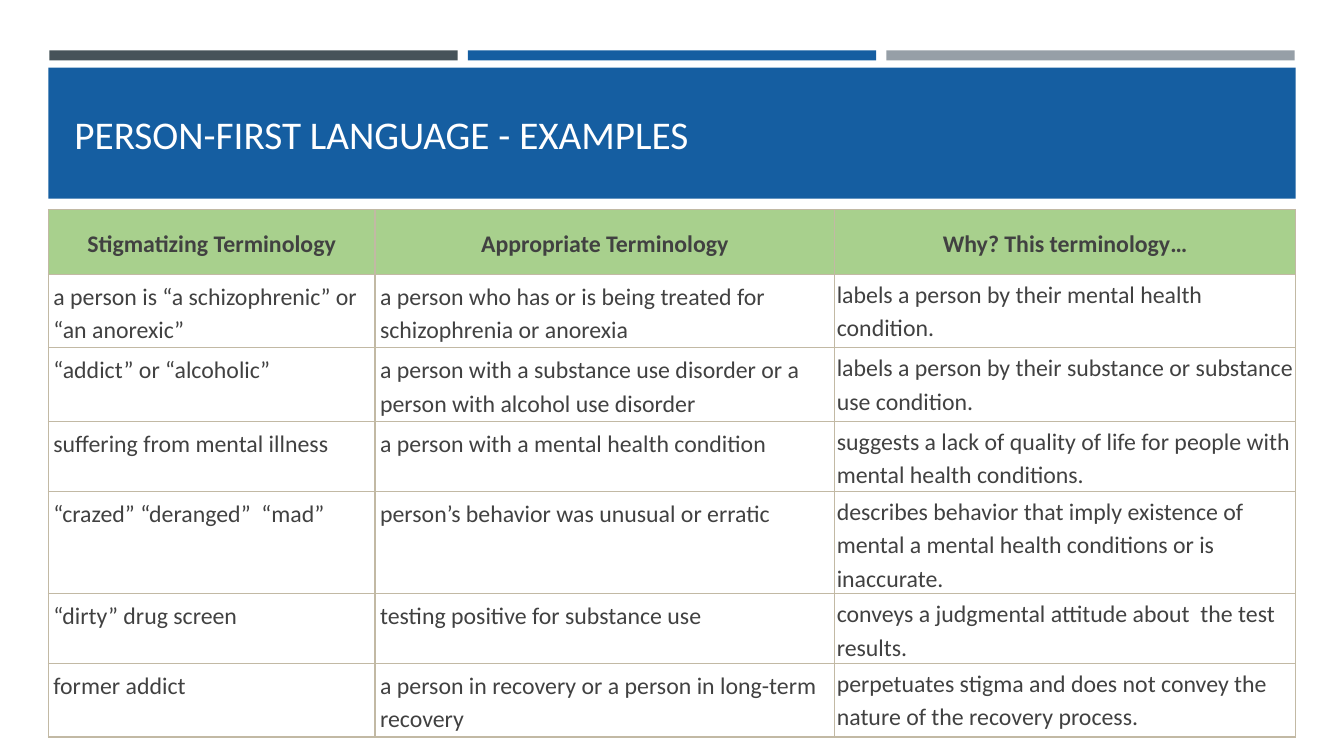
"""Build the slide of person-first language examples."""
from dataclasses import dataclass

from lxml.etree import SubElement
from pptx import Presentation
from pptx.dml.color import RGBColor
from pptx.enum.shapes import MSO_SHAPE as Shape
from pptx.enum.text import MSO_ANCHOR as Anchor, PP_ALIGN as Align
from pptx.oxml.ns import qn
from pptx.util import Inches, Pt

SLATE = RGBColor(0x46, 0x53, 0x59)
BLUE = RGBColor(0x15, 0x5E, 0xA1)
GRAY = RGBColor(0x96, 0x9F, 0xA7)
WHITE = RGBColor(0xFF, 0xFF, 0xFF)
GREEN = RGBColor(0xA8, 0xD0, 0x8D)
INK = RGBColor(0x41, 0x41, 0x41)
BORDER = RGBColor(0xC2, 0xB9, 0xA4)
FONT = "Calibri"


@dataclass(frozen=True)
class Band:
    left: float
    top: float
    width: float
    height: float
    color: RGBColor


@dataclass(frozen=True)
class Example:
    stigmatizing: str
    appropriate: str
    reason: str
    height: float

    def texts(self) -> tuple[str, str, str]:
        return self.stigmatizing, self.appropriate, self.reason


BANDS = [
    Band(0.49 + 4.15 * index, 0.5, 4.05, 0.1, color)
    for index, color in enumerate((SLATE, BLUE, GRAY))
] + [Band(0.48, 0.67, 12.37, 1.3, BLUE)]

COLUMN_WIDTHS = (3.24, 4.56, 4.57)
CELL_MARGINS = ((0.05, 0.04), (0.05, 0.04), (0.02, 0.02))
EXAMPLES = [
    Example("Stigmatizing Terminology", "Appropriate Terminology",
            "Why? This terminology…", 0.64),
    Example("a person is “a schizophrenic” or “an anorexic”",
            "a person who has or is being treated for schizophrenia or anorexia",
            "labels a person by their mental health condition.", 0.67),
    Example("“addict” or “alcoholic”",
            "a person with a substance use disorder or a person with alcohol use disorder",
            "labels a person by their substance or substance use condition.", 0.67),
    Example("suffering from mental illness",
            "a person with a mental health condition",
            "suggests a lack of quality of life for people with mental health conditions.",
            0.64),
    Example("“crazed” “deranged”  “mad”",
            "person’s behavior was unusual or erratic",
            "describes behavior that imply existence of mental a mental health "
            "conditions or is inaccurate.", 0.67),
    Example("“dirty” drug screen",
            "testing positive for substance use",
            "conveys a judgmental attitude about  the test results.", 0.64),
    Example("former addict",
            "a person in recovery or a person in long-term recovery",
            "perpetuates stigma and does not convey the nature of the recovery process.",
            0.67),
]


def style_font(font, size: float, color: RGBColor, bold: bool = False) -> None:
    font.name = FONT
    font.size = Pt(size)
    font.bold = bold
    font.color.rgb = color


def draw_band(page, band: Band) -> None:
    shape = page.shapes.add_shape(
        Shape.RECTANGLE, Inches(band.left), Inches(band.top),
        Inches(band.width), Inches(band.height))
    shape.shadow.inherit = False
    shape.fill.solid()
    shape.fill.fore_color.rgb = band.color
    shape.line.fill.background()


def draw_title(page, text: str) -> None:
    box = page.shapes.add_textbox(
        Inches(0.64), Inches(0.77), Inches(12.06), Inches(1.11))
    frame = box.text_frame
    frame.word_wrap = True
    frame.vertical_anchor = Anchor.MIDDLE
    frame.text = text
    style_font(frame.paragraphs[0].runs[0].font, 28, WHITE)


def set_borders(cell) -> None:
    properties = cell._tc.get_or_add_tcPr()
    for index, side in enumerate(("a:lnL", "a:lnR", "a:lnT", "a:lnB")):
        line = properties.makeelement(qn(side), {"w": str(Pt(1))})
        fill = SubElement(line, qn("a:solidFill"))
        SubElement(fill, qn("a:srgbClr"), val=str(BORDER))
        properties.insert(index, line)


def fill_cell(cell, text: str, margins: tuple[float, float], header: bool) -> None:
    side, edge = margins
    cell.margin_left = cell.margin_right = Inches(side)
    cell.margin_top = cell.margin_bottom = Inches(edge)
    cell.vertical_anchor = Anchor.MIDDLE if header else Anchor.TOP
    cell.fill.solid()
    cell.fill.fore_color.rgb = GREEN if header else WHITE
    set_borders(cell)
    cell.text_frame.text = text
    para = cell.text_frame.paragraphs[0]
    para.alignment = Align.CENTER if header else Align.LEFT
    para.line_spacing = 1.15
    style_font(para.runs[0].font, 17, INK, header)


def draw_table(page, examples: list[Example]) -> None:
    table = page.shapes.add_table(
        len(examples), len(COLUMN_WIDTHS), Inches(0.48), Inches(2.08),
        Inches(sum(COLUMN_WIDTHS)),
        Inches(sum(example.height for example in examples))).table
    table.horz_banding = False
    for column, width in zip(table.columns, COLUMN_WIDTHS):
        column.width = Inches(width)
    for index, (row, example) in enumerate(zip(table.rows, examples)):
        row.height = Inches(example.height)
        for cell, text, margins in zip(row.cells, example.texts(), CELL_MARGINS):
            fill_cell(cell, text, margins, header=index == 0)


def main() -> None:
    deck = Presentation()
    deck.slide_width = Inches(13.33)
    deck.slide_height = Inches(7.5)
    page = deck.slides.add_slide(deck.slide_layouts[6])
    for band in BANDS:
        draw_band(page, band)
    draw_title(page, "PERSON-FIRST LANGUAGE - EXAMPLES")
    draw_table(page, EXAMPLES)
    deck.save("out.pptx")


if __name__ == "__main__":
    main()
